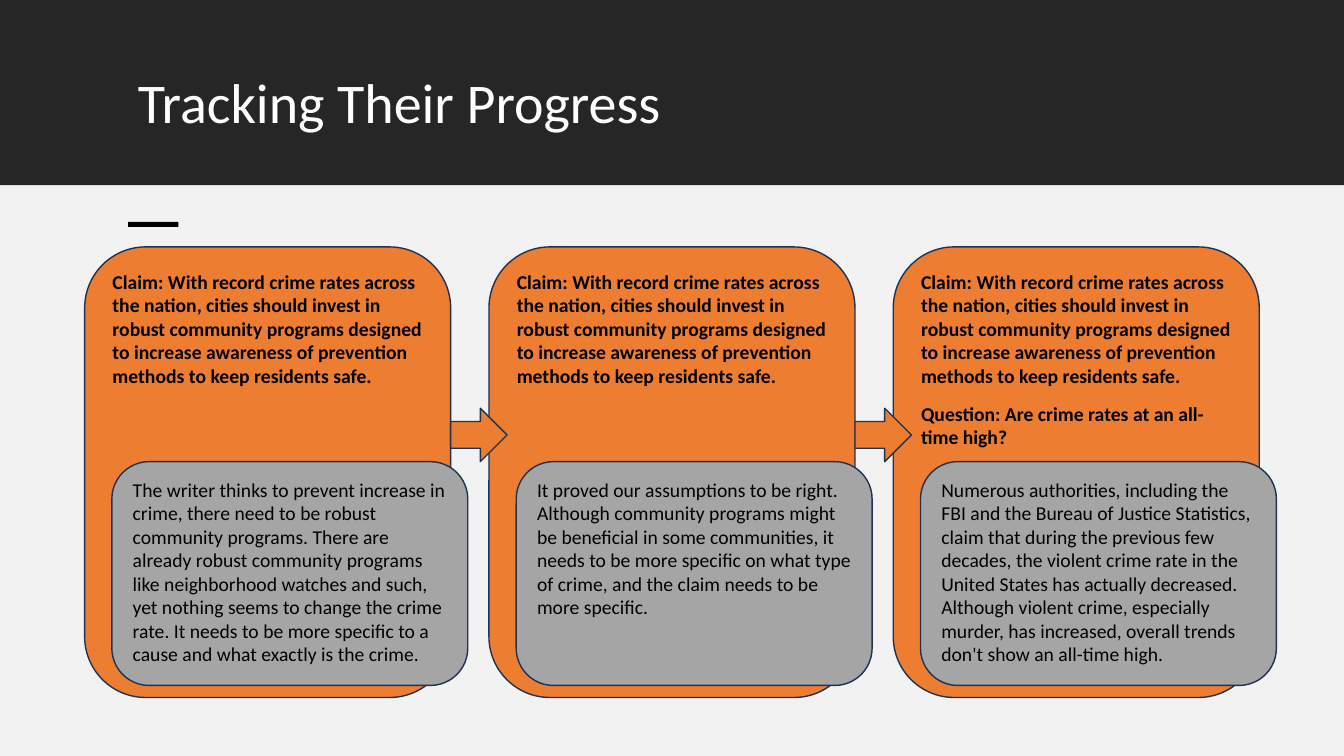
from dataclasses import dataclass

from pptx import Presentation
from pptx import util as u
from pptx.dml.color import RGBColor
from pptx.enum import shapes, text

TITLE = "Tracking Their Progress"
CLAIM = (
    "Claim: With record crime rates across the nation, cities should invest in robust "
    "community programs designed to increase awareness of prevention methods to keep "
    "residents safe."
)
STEPS = [
    {
        "claim": [CLAIM],
        "finding": "The writer thinks to prevent increase in crime, there need to be robust "
        "community programs. There are already robust community programs like neighborhood "
        "watches and such, yet nothing seems to change the crime rate. It needs to be more "
        "specific to a cause and what exactly is the crime.",
    },
    {
        "claim": [CLAIM],
        "finding": "It proved our assumptions to be right. Although community programs might "
        "be beneficial in some communities, it needs to be more specific on what type of "
        "crime, and the claim needs to be more specific.",
    },
    {
        "claim": [CLAIM, "Question: Are crime rates at an all-time high?"],
        "finding": "Numerous authorities, including the FBI and the Bureau of Justice "
        "Statistics, claim that during the previous few decades, the violent crime rate in "
        "the United States has actually decreased. Although violent crime, especially murder, "
        "has increased, overall trends don't show an all-time high.",
    },
]


@dataclass(frozen=True)
class Theme:
    font: str = "Calibri"
    title_size: int = 40
    body_size: int = 14
    question_gap: int = 10
    outline_width: int = 1
    header: str = "262626"
    background: str = "F2F2F2"
    claim: str = "ED7D31"
    finding: str = "A5A5A5"
    outline: str = "1E3256"
    dark: str = "000000"
    light: str = "FFFFFF"


THEME = Theme()
WIDTH, HEIGHT = 13.33, 7.5
HEADER_HEIGHT = 1.84
TITLE_LEFT = 1.27
STEP_PITCH = 4.01
CLAIM_BOX = (0.84, 2.45, 3.63, 4.47)
FINDING_BOX = (1.11, 4.58, 3.53, 2.22)
ARROW_BOX = (CLAIM_BOX[0] + CLAIM_BOX[2], 4.05, 0.56, 0.53)


def step_box(box, index):
    left, top, width, height = box
    return left + index * STEP_PITCH, top, width, height


def add_block(slide, kind, box, fill, outlined=False):
    shape = slide.shapes.add_shape(kind, *map(u.Inches, box))
    shape.shadow.inherit = False
    shape.fill.solid()
    shape.fill.fore_color.rgb = RGBColor.from_string(fill)
    if outlined:
        shape.line.color.rgb = RGBColor.from_string(THEME.outline)
        shape.line.width = u.Pt(THEME.outline_width)
    else:
        shape.line.fill.background()
    return shape


def write(shape, lines, size, color, bold=False):
    frame = shape.text_frame
    frame.word_wrap = True
    frame.vertical_anchor = text.MSO_ANCHOR.TOP
    frame.text = "\n".join(lines)
    for index, paragraph in enumerate(frame.paragraphs):
        paragraph.alignment = text.PP_ALIGN.LEFT
        if index:
            paragraph.space_before = u.Pt(THEME.question_gap)
        for run in paragraph.runs:
            run.font.name = THEME.font
            run.font.size = u.Pt(size)
            run.font.bold = bold
            run.font.color.rgb = RGBColor.from_string(color)


def add_header(slide):
    rectangle = shapes.MSO_SHAPE.RECTANGLE
    add_block(slide, rectangle, (0, 0, WIDTH, HEADER_HEIGHT), THEME.header)
    title = slide.shapes.add_textbox(*map(u.Inches, (TITLE_LEFT, 0.7, 10.81, 0.98)))
    write(title, [TITLE], THEME.title_size, THEME.light)
    title.text_frame.paragraphs[0].line_spacing = 0.9
    body = (0, HEADER_HEIGHT, WIDTH, HEIGHT - HEADER_HEIGHT)
    add_block(slide, rectangle, body, THEME.background)
    add_block(slide, rectangle, (TITLE_LEFT, 2.2, 0.5, 0.05), THEME.dark)


def add_steps(slide):
    rounded = shapes.MSO_SHAPE.ROUNDED_RECTANGLE
    for index, step in enumerate(STEPS):
        claim = add_block(slide, rounded, step_box(CLAIM_BOX, index), THEME.claim, True)
        write(claim, step["claim"], THEME.body_size, THEME.dark, bold=True)
    for index, step in enumerate(STEPS):
        finding = add_block(slide, rounded, step_box(FINDING_BOX, index), THEME.finding, True)
        write(finding, [step["finding"]], THEME.body_size, THEME.dark)
    for index in range(len(STEPS) - 1):
        arrow_box = step_box(ARROW_BOX, index)
        add_block(slide, shapes.MSO_SHAPE.RIGHT_ARROW, arrow_box, THEME.claim, True)


def main():
    presentation = Presentation()
    presentation.slide_width = u.Inches(WIDTH)
    presentation.slide_height = u.Inches(HEIGHT)
    slide = presentation.slides.add_slide(presentation.slide_layouts[6])
    add_header(slide)
    add_steps(slide)
    presentation.save("out.pptx")


if __name__ == "__main__":
    main()
